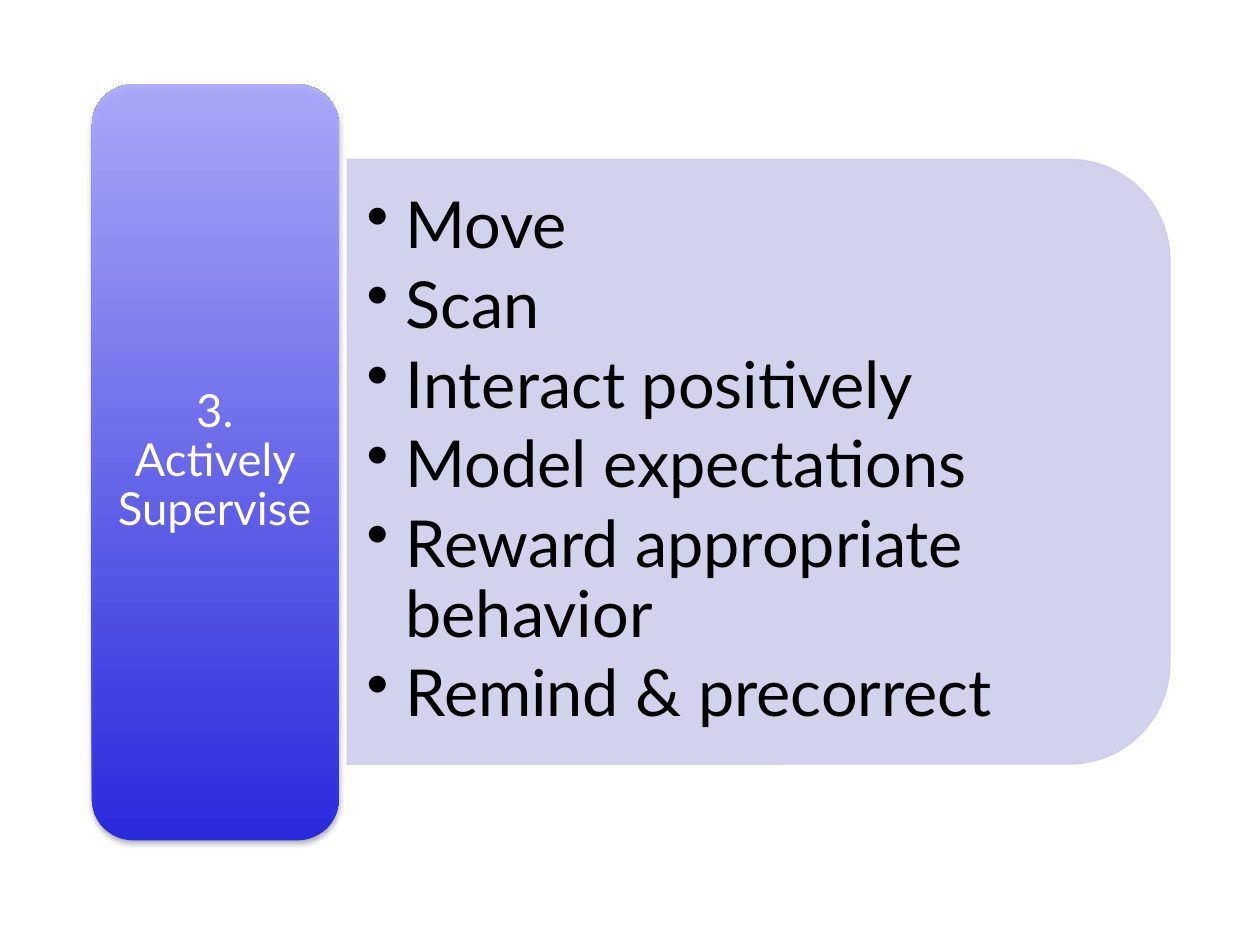
from lxml import etree
from pptx import Presentation
from pptx.dml.color import RGBColor
from pptx.enum.shapes import MSO_SHAPE as Shape
from pptx.enum.text import MSO_ANCHOR as Anchor, PP_ALIGN as Align
from pptx.oxml.ns import qn
from pptx.util import Inches, Pt

COLORS = {"panel": "CECEEC", "deep": "1C1CE3", "pale": "A7A7FF",
          "text": "000000", "label": "FFFFFF", "shadow": "000000"}
FONT = "Lato"
ACTIONS = ["Move", "Scan", "Interact positively", "Model expectations",
           "Reward appropriate behavior", "Remind & precorrect"]


def rgb(name):
    return RGBColor.from_string(COLORS[name])


def set_alpha(element, percent):
    for color in element.iter(qn("a:srgbClr")):
        etree.SubElement(color, qn("a:alpha"), val=str(percent * 1000))


def write(frame, lines, size, color, align=Align.LEFT, after=0, indent=0):
    for index, line in enumerate(lines):
        paragraph = frame.paragraphs[0] if index == 0 else frame.add_paragraph()
        paragraph.alignment = align
        paragraph.line_spacing = 0.9
        paragraph.space_after = Pt(size * after)
        if indent:
            paragraph.level = 1
            properties = paragraph._p.get_or_add_pPr()
            properties.set("marL", str(Inches(indent)))
            properties.set("indent", str(-Inches(indent)))
            etree.SubElement(properties, qn("a:buChar"), char="•")
        run = paragraph.add_run()
        run.text = line
        run.font.size = Pt(size)
        run.font.name = FONT
        run.font.color.rgb = rgb(color)


class SlideBuilder:
    def __init__(self, slide, opacity=90):
        self.slide = slide
        self.opacity = opacity

    def shape(self, kind, box):
        shape = self.slide.shapes.add_shape(kind, *map(Inches, box))
        shape.shadow.inherit = False
        return shape

    def panel(self, box):
        panel = self.shape(Shape.ROUND_2_SAME_RECTANGLE, box)
        panel.rotation = 90
        panel.fill.solid()
        panel.fill.fore_color.rgb = rgb("panel")
        panel.line.color.rgb = rgb("panel")
        panel.line.width = Pt(0.75)
        set_alpha(panel._element.spPr, self.opacity)

    def tab(self, box):
        tab = self.shape(Shape.ROUNDED_RECTANGLE, box)
        tab.line.fill.background()
        tab.fill.gradient()
        tab.fill.gradient_angle = 90
        for stop, name in zip(tab.fill.gradient_stops, ("deep", "pale")):
            stop.color.rgb = rgb(name)
        properties = tab._element.spPr
        set_alpha(properties, self.opacity)
        shadow = etree.SubElement(
            properties.find(qn("a:effectLst")), qn("a:outerShdw"),
            blurRad=str(Pt(3.1)), dist=str(Pt(1.8)), dir="5400000", rotWithShape="0")
        color = etree.SubElement(shadow, qn("a:srgbClr"), val=COLORS["shadow"])
        etree.SubElement(color, qn("a:alpha"), val="35000")

    def text(self, box, lines, margins, **style):
        frame = self.slide.shapes.add_textbox(*map(Inches, box)).text_frame
        frame.word_wrap = True
        frame.vertical_anchor = Anchor.MIDDLE
        side, edge = map(Inches, margins)
        frame.margin_left = frame.margin_right = side
        frame.margin_top = frame.margin_bottom = edge
        write(frame, lines, **style)


def main():
    deck = Presentation()
    deck.slide_width, deck.slide_height = Inches(10), Inches(7.5)
    builder = SlideBuilder(deck.slides.add_slide(deck.slide_layouts[6]))
    builder.panel((3.62, 0.4, 4.8, 6.53))
    builder.text((2.76, 1.5, 6.29, 4.33), ACTIONS, (0.15, 0.08),
                 size=37, color="text", after=0.15, indent=0.31)
    builder.tab((0.73, 0.67, 1.96, 6))
    builder.text((0.82, 0.76, 1.77, 5.81), ["3. Actively Supervise"], (0.11, 0.05),
                 size=26, color="label", align=Align.CENTER, after=0.35)
    deck.save("out.pptx")


if __name__ == "__main__":
    main()
